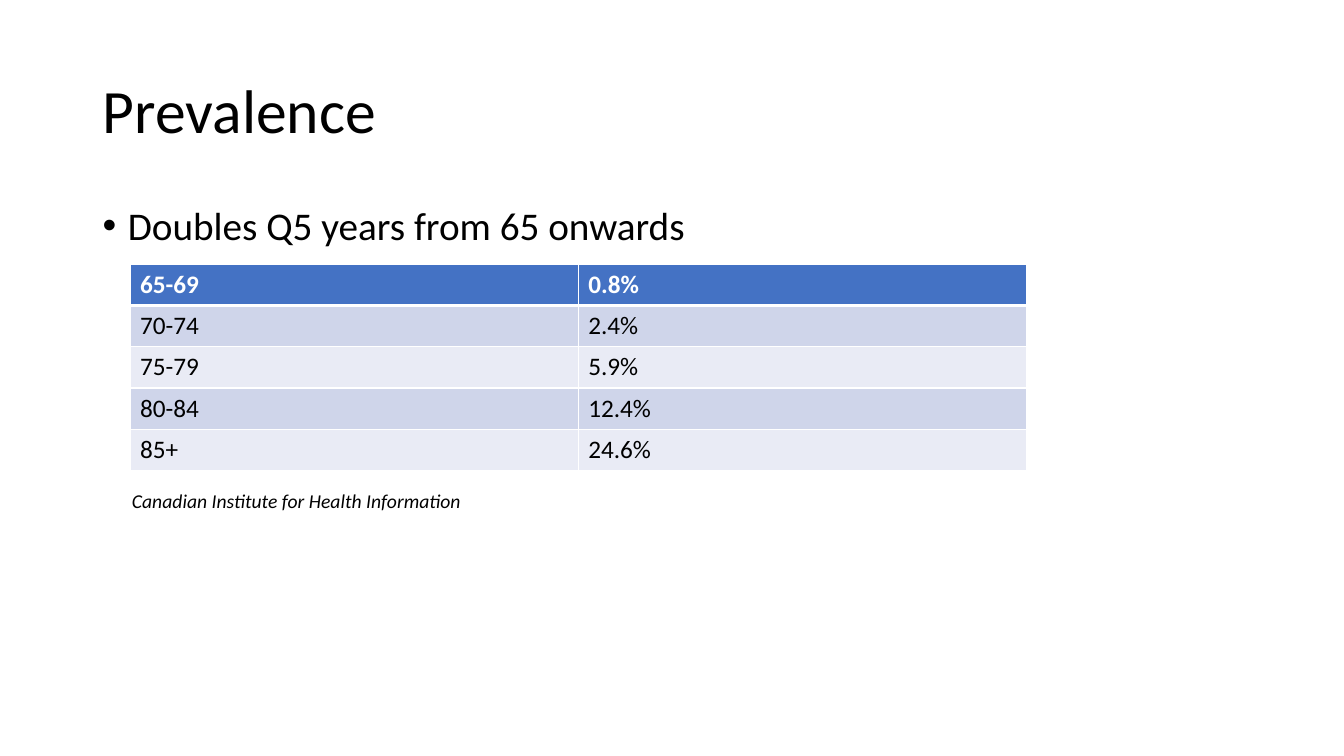
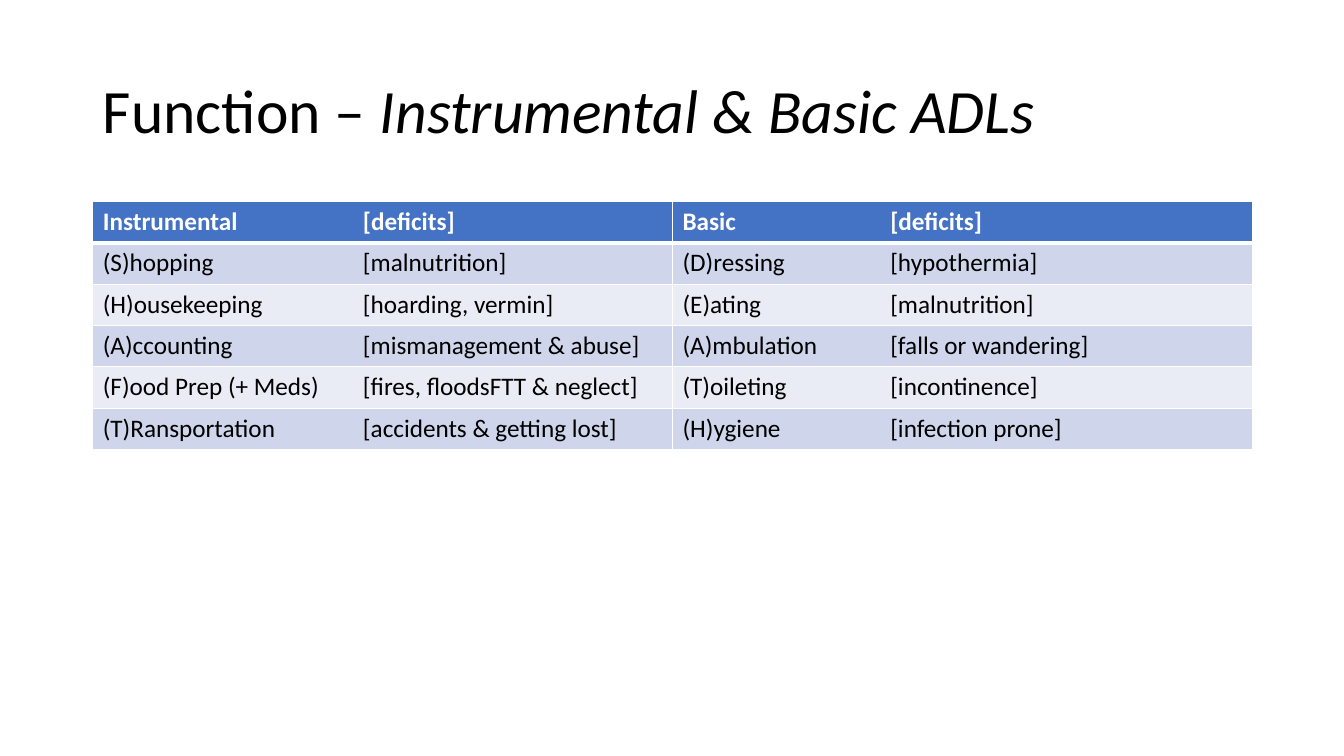
import lxml.etree
import pptx
import pptx.dml.color
import pptx.enum.text
import pptx.oxml.ns
import pptx.util

Inches = pptx.util.Inches
Pt = pptx.util.Pt
qn = pptx.oxml.ns.qn

BLACK = "000000"
WHITE = "FFFFFF"
HEADER_FILL = "4472C4"
BAND_FILLS = ("CFD5EA", "E9EBF5")
FONT_NAME = "Calibri"
TITLE_LAYOUT = 5
CONTENT_LEFT = 0.92
CONTENT_TOP = 2
CONTENT_WIDTH = 11.5
ROW_HEIGHT = 0.41
RULE_WIDTH = 1
HEADER_RULE_WIDTH = 3

TITLE_FORMAT = {"size": Pt(44), "bold": False}
BULLET_FORMAT = {"size": Pt(28)}
SOURCE_FORMAT = {"size": Pt(14), "italic": True}
HEADER_FORMAT = {"size": Pt(18), "bold": True}
CELL_FORMAT = {"size": Pt(18), "bold": False}

PREVALENCE_ROWS = [
    ("65-69", "0.8%"),
    ("70-74", "2.4%"),
    ("75-79", "5.9%"),
    ("80-84", "12.4%"),
    ("85+", "24.6%"),
]
FUNCTION_ROWS = [
    ("Instrumental\t[deficits]", "Basic\t[deficits]"),
    ("(S)hopping\t[malnutrition]", "(D)ressing\t[hypothermia]"),
    ("(H)ousekeeping\t[hoarding, vermin]", "(E)ating\t[malnutrition]"),
    ("(A)ccounting\t[mismanagement & abuse]", "(A)mbulation\t[falls or wandering]"),
    ("(F)ood Prep (+ Meds)\t[fires, floodsFTT & neglect]", "(T)oileting\t[incontinence]"),
    ("(T)Ransportation\t[accidents & getting lost]", "(H)ygiene\t[infection prone]"),
]
DEFICIT_TABS = (2.58, 2.06)


def rgb(color):
    return pptx.dml.color.RGBColor.from_string(color)


def inches(*lengths):
    return [Inches(length) for length in lengths]


def add_run(paragraph, text, font_format, color=BLACK):
    run = paragraph.add_run()
    run.text = text
    run.font.name = FONT_NAME
    run.font.color.rgb = rgb(color)
    for name, value in font_format.items():
        setattr(run.font, name, value)


def add_titled_slide(presentation, title, italic_part=""):
    slide = presentation.slides.add_slide(presentation.slide_layouts[TITLE_LAYOUT])
    shape = slide.shapes.title
    shape.left, shape.top, shape.width, shape.height = inches(
        CONTENT_LEFT, 0.4, CONTENT_WIDTH, 1.45)
    frame = shape.text_frame
    frame.auto_size = pptx.enum.text.MSO_AUTO_SIZE.NONE
    frame.vertical_anchor = pptx.enum.text.MSO_ANCHOR.MIDDLE
    paragraph = frame.paragraphs[0]
    paragraph.alignment = pptx.enum.text.PP_ALIGN.LEFT
    paragraph.line_spacing = 0.9
    add_run(paragraph, title, TITLE_FORMAT)
    if italic_part:
        add_run(paragraph, italic_part, {**TITLE_FORMAT, "italic": True})
    return slide


def add_text(slide, text, box, font_format):
    frame = slide.shapes.add_textbox(*inches(*box)).text_frame
    frame.word_wrap = True
    paragraph = frame.paragraphs[0]
    add_run(paragraph, text, font_format)
    return paragraph


def make_bullet(paragraph):
    paragraph.line_spacing = 0.9
    paragraph.space_before = Pt(10)
    properties = paragraph._p.get_or_add_pPr()
    properties.set("marL", str(Inches(0.25)))
    properties.set("indent", str(Inches(-0.25)))
    lxml.etree.SubElement(properties, qn("a:buFont"), typeface="Arial")
    lxml.etree.SubElement(properties, qn("a:buChar"), char="•")


def add_tab_stop(paragraph, position):
    properties = paragraph._p.get_or_add_pPr()
    tabs = lxml.etree.SubElement(properties, qn("a:tabLst"))
    lxml.etree.SubElement(tabs, qn("a:tab"), pos=str(Inches(position)), algn="l")


def set_borders(cell, top, bottom):
    """Draw white rules; the border elements must precede the cell's fill."""
    properties = cell._tc.get_or_add_tcPr()
    widths = {"lnL": RULE_WIDTH, "lnR": RULE_WIDTH, "lnT": top, "lnB": bottom}
    for index, (side, width) in enumerate(widths.items()):
        line = lxml.etree.Element(qn("a:" + side), w=str(Pt(width)))
        fill = lxml.etree.SubElement(line, qn("a:solidFill"))
        lxml.etree.SubElement(fill, qn("a:srgbClr"), val=WHITE)
        properties.insert(index, line)


def add_banded_table(slide, rows, left, top, width, tab_stops=()):
    column_count = len(rows[0])
    table = slide.shapes.add_table(
        len(rows), column_count,
        *inches(left, top, width, ROW_HEIGHT * len(rows))).table
    for column in table.columns:
        column.width = Inches(width / column_count)
    for row_index, texts in enumerate(rows):
        is_header = row_index == 0
        table.rows[row_index].height = Inches(ROW_HEIGHT)
        for column_index, text in enumerate(texts):
            cell = table.cell(row_index, column_index)
            cell.fill.solid()
            cell.fill.fore_color.rgb = rgb(
                HEADER_FILL if is_header else BAND_FILLS[(row_index - 1) % 2])
            set_borders(
                cell,
                top=HEADER_RULE_WIDTH if row_index == 1 else RULE_WIDTH,
                bottom=HEADER_RULE_WIDTH if is_header else RULE_WIDTH)
            paragraph = cell.text_frame.paragraphs[0]
            if tab_stops:
                add_tab_stop(paragraph, tab_stops[column_index])
            add_run(paragraph, text,
                    HEADER_FORMAT if is_header else CELL_FORMAT,
                    WHITE if is_header else BLACK)


def add_prevalence_slide(presentation):
    slide = add_titled_slide(presentation, "Prevalence")
    bullet = add_text(slide, "Doubles Q5 years from 65 onwards",
                      (CONTENT_LEFT, CONTENT_TOP, CONTENT_WIDTH, 4.76), BULLET_FORMAT)
    make_bullet(bullet)
    add_banded_table(slide, PREVALENCE_ROWS, 1.29, 2.62, 8.89)
    add_text(slide, "Canadian Institute for Health Information",
             (1.21, 4.8, 8.02, 0.34), SOURCE_FORMAT)


def add_function_slide(presentation):
    slide = add_titled_slide(presentation, "Function – ", "Instrumental & Basic ADLs")
    add_banded_table(slide, FUNCTION_ROWS, CONTENT_LEFT, CONTENT_TOP,
                     CONTENT_WIDTH, DEFICIT_TABS)


def main():
    presentation = pptx.Presentation()
    presentation.slide_width, presentation.slide_height = inches(13.33, 7.5)
    add_prevalence_slide(presentation)
    add_function_slide(presentation)
    presentation.save("out.pptx")


if __name__ == "__main__":
    main()
